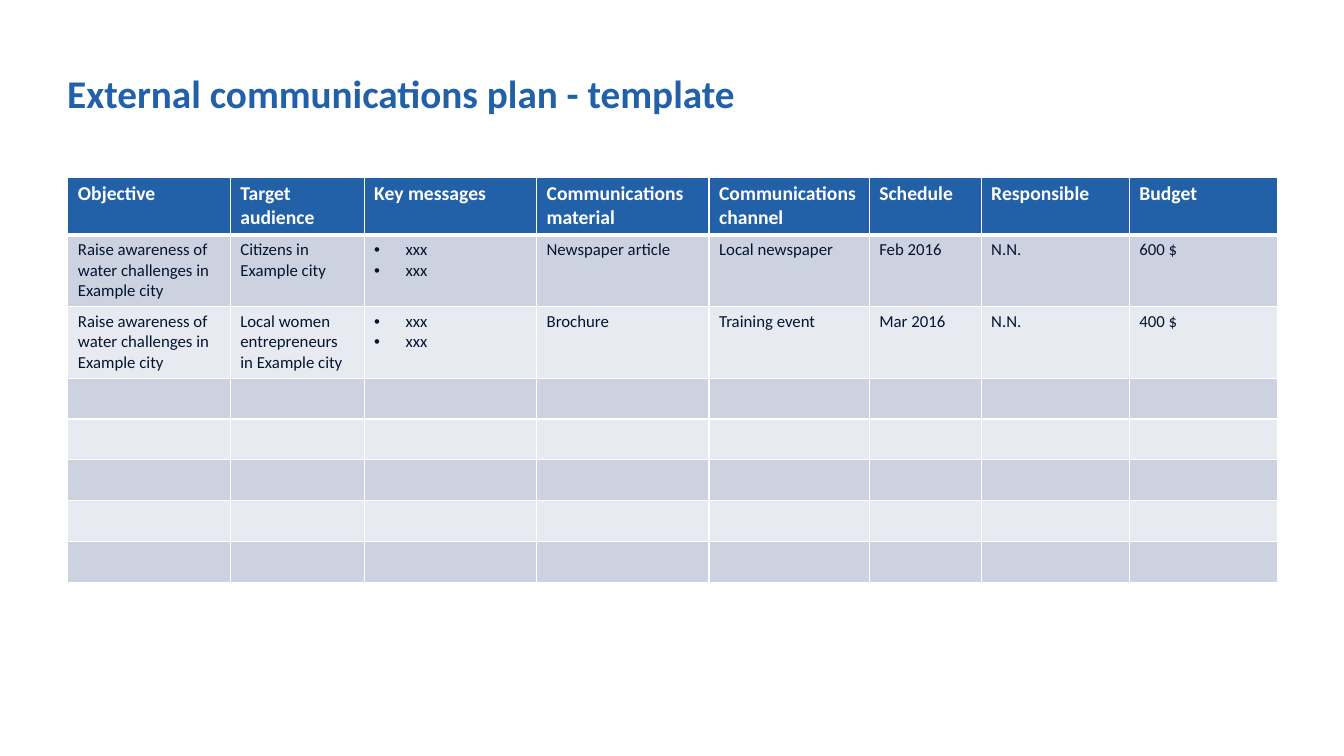
from lxml.etree import SubElement
from pptx import Presentation
from pptx.dml.color import RGBColor
from pptx.enum.text import MSO_ANCHOR, MSO_AUTO_SIZE, PP_ALIGN
from pptx.oxml.ns import qn
from pptx.util import Pt

COLORS = {
    "blue": "2260A8",
    "ink": "021631",
    "white": "FFFFFF",
    "dark band": "CDD2E1",
    "light band": "E8EAF1",
}
FONT = "Calibri"
BULLET_INDENT = Pt(22.5)

HEADINGS = ["Objective", "Target audience", "Key messages", "Communications material",
            "Communications channel", "Schedule", "Responsible", "Budget"]
OBJECTIVE = "Raise awareness of water challenges in Example city"
MESSAGES = ["xxx", "xxx"]
ACTIVITIES = [
    [OBJECTIVE, "Citizens in Example city", MESSAGES, "Newspaper article",
     "Local newspaper", "Feb 2016", "N.N.", "600 $"],
    [OBJECTIVE, "Local women entrepreneurs in Example city", MESSAGES, "Brochure",
     "Training event", "Mar 2016", "N.N.", "400 $"],
]
EMPTY_ROWS = 5
COLUMN_WIDTHS = [116, 95.6, 123.2, 123.2, 114.4, 80, 105.8, 105.8]
ROW_HEIGHTS = [40.6, 51.2, 51.2] + [29.2] * EMPTY_ROWS


def rgb(color):
    return RGBColor.from_string(COLORS[color])


def add_bullet(paragraph):
    properties = paragraph._p.get_or_add_pPr()
    properties.set("marL", str(BULLET_INDENT))
    properties.set("indent", str(-BULLET_INDENT))
    SubElement(properties, qn("a:buFont"), typeface="Arial")
    SubElement(properties, qn("a:buChar"), char="•")


def write_text(frame, text, size=12, color="ink", bold=False):
    """Write a string as one paragraph, or a list as bulleted paragraphs."""
    bulleted = isinstance(text, list)
    for index, line in enumerate(text if bulleted else [text]):
        paragraph = frame.add_paragraph() if index else frame.paragraphs[0]
        if bulleted:
            add_bullet(paragraph)
        paragraph.alignment = PP_ALIGN.LEFT
        run = paragraph.add_run()
        run.text = line
        run.font.name = FONT
        run.font.size = Pt(size)
        run.font.bold = bold
        run.font.color.rgb = rgb(color)


def set_borders(cell, top, bottom):
    """Draw white borders, with the top and bottom widths in points."""
    properties = cell._tc.get_or_add_tcPr()
    for side, width in (("L", 1), ("R", 1), ("T", top), ("B", bottom)):
        line = SubElement(properties, qn(f"a:ln{side}"), w=str(Pt(width)))
        fill = SubElement(line, qn("a:solidFill"))
        SubElement(fill, qn("a:srgbClr"), val=COLORS["white"])


def format_cell(cell, fill, top=1, bottom=1):
    set_borders(cell, top, bottom)
    cell.fill.solid()
    cell.fill.fore_color.rgb = rgb(fill)


def place_title(slide, text):
    title = slide.shapes.title
    title.left, title.top, title.width, title.height = Pt(48), Pt(15), Pt(739), Pt(72)
    frame = title.text_frame
    frame.auto_size = MSO_AUTO_SIZE.NONE
    frame.word_wrap = True
    frame.vertical_anchor = MSO_ANCHOR.BOTTOM
    frame.margin_left, frame.margin_right = 0, Pt(7.2)
    frame.margin_top, frame.margin_bottom = Pt(5.76), Pt(3.6)
    write_text(frame, text, size=28, color="blue", bold=True)


def add_plan(slide):
    plan = slide.shapes.add_table(
        len(ROW_HEIGHTS), len(COLUMN_WIDTHS), Pt(48.5), Pt(126.4),
        Pt(sum(COLUMN_WIDTHS)), Pt(sum(ROW_HEIGHTS))).table
    for column, width in zip(plan.columns, COLUMN_WIDTHS):
        column.width = Pt(width)
    for row, height in zip(plan.rows, ROW_HEIGHTS):
        row.height = Pt(height)

    for cell, heading in zip(plan.rows[0].cells, HEADINGS):
        format_cell(cell, "blue", bottom=3)
        write_text(cell.text_frame, heading, size=14, color="white", bold=True)
    for number in range(1, len(ROW_HEIGHTS)):
        band = "dark band" if number % 2 else "light band"
        for cell in plan.rows[number].cells:
            format_cell(cell, band, top=3 if number == 1 else 1)
    for number, activity in enumerate(ACTIVITIES, start=1):
        for cell, entry in zip(plan.rows[number].cells, activity):
            write_text(cell.text_frame, entry)


def main():
    deck = Presentation()
    deck.slide_width, deck.slide_height = Pt(960), Pt(540)
    slide = deck.slides.add_slide(deck.slide_layouts[5])
    place_title(slide, "External communications plan - template")
    add_plan(slide)
    deck.save("out.pptx")


if __name__ == "__main__":
    main()
